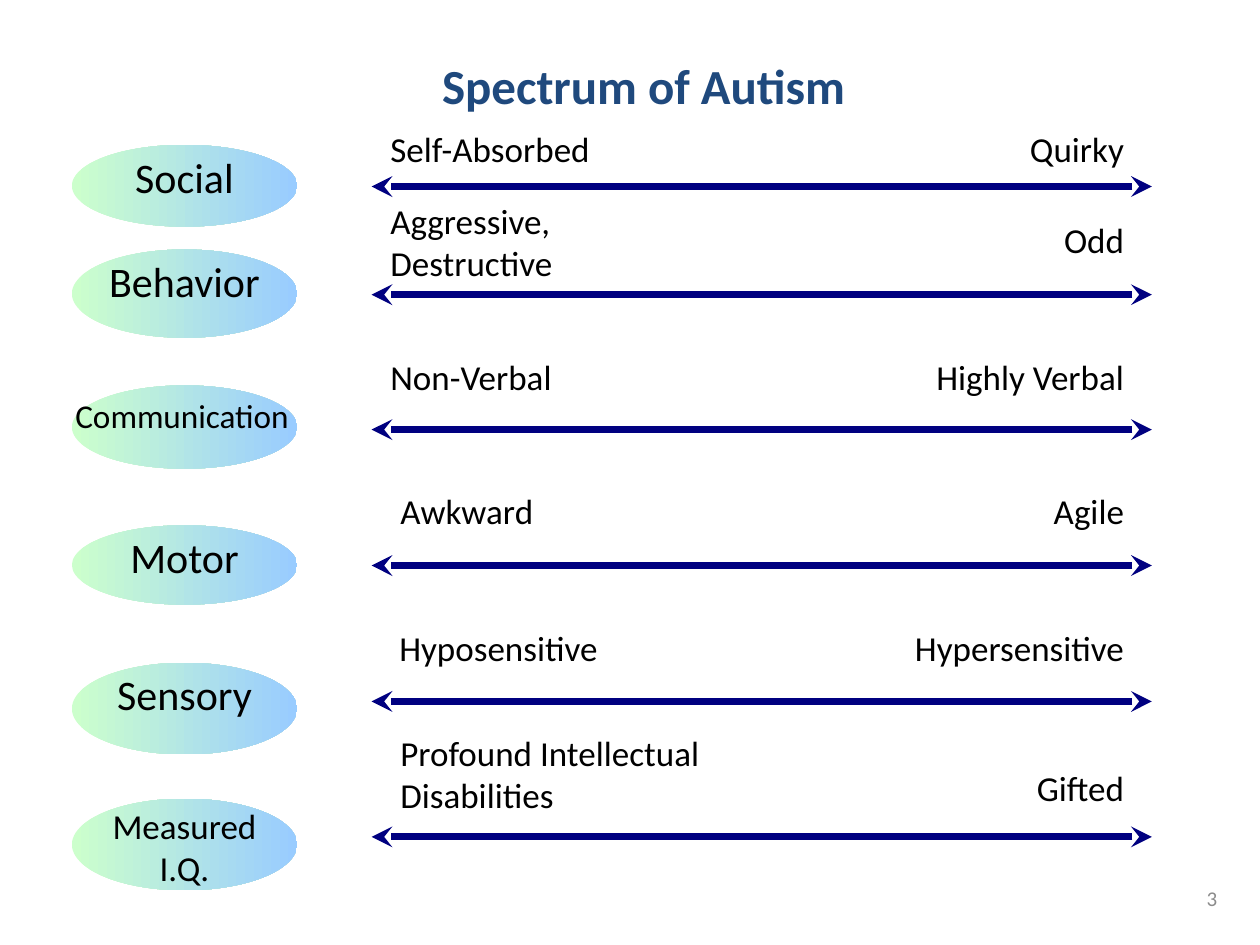
from dataclasses import dataclass

from lxml import etree
from pptx import Presentation
from pptx import util as u
from pptx.dml import color
from pptx.enum import shapes, text
from pptx.oxml import ns

FONT = "Calibri"
BLACK = "000000"
NAVY = "000080"
OVAL_LEFT, OVAL_WIDTH = 1.45, 4.54
ARROW_LEFT, ARROW_RIGHT = 7.49, 23.22
HIGH_RIGHT = 22.91  # shared right edge of the right-hand labels


@dataclass
class Box:
    """Lengths in centimetres."""
    left: float
    top: float
    width: float
    height: float


@dataclass
class Label:
    words: str
    box: Box
    size: int = 20
    align: text.PP_ALIGN = text.PP_ALIGN.LEFT


@dataclass
class Scale:
    oval_top: float
    oval_height: float
    arrow_y: float
    name: Label
    low: Label
    high: Label


def rgb(value: str) -> color.RGBColor:
    return color.RGBColor.from_string(value)


def lengths(box: Box) -> list:
    return [u.Cm(n) for n in (box.left, box.top, box.width, box.height)]


def name_label(words: str, top: float, height: float, size: int = 24) -> Label:
    return Label(words, Box(1.75, top, 3.94, height), size, text.PP_ALIGN.CENTER)


def high_label(words: str, top: float, width: float, height: float) -> Label:
    box = Box(HIGH_RIGHT - width, top, width, height)
    return Label(words, box, align=text.PP_ALIGN.RIGHT)


def fill_text(shape, label: Label, ink: str = BLACK, bold: bool = False) -> None:
    frame = shape.text_frame
    frame.word_wrap = True
    frame.text = label.words
    for paragraph in frame.paragraphs:
        paragraph.alignment = label.align
        for run in paragraph.runs:
            run.font.name = FONT
            run.font.size = u.Pt(label.size)
            run.font.bold = bold
            run.font.color.rgb = rgb(ink)


def add_label(slide, label: Label, ink: str = BLACK):
    shape = slide.shapes.add_textbox(*lengths(label.box))
    fill_text(shape, label, ink)
    return shape


def add_oval(slide, top: float, height: float) -> None:
    box = Box(OVAL_LEFT, top, OVAL_WIDTH, height)
    oval = slide.shapes.add_shape(shapes.MSO_SHAPE.OVAL, *lengths(box))
    oval.shadow.inherit = False
    oval.line.fill.background()
    oval.fill.gradient()
    oval.fill.gradient_angle = 0
    for stop, value in zip(oval.fill.gradient_stops, ("CCFFCC", "99CCFF")):
        stop.color.rgb = rgb(value)


def add_arrow(slide, y: float) -> None:
    arrow = slide.shapes.add_connector(
        shapes.MSO_CONNECTOR.STRAIGHT,
        u.Cm(ARROW_RIGHT), u.Cm(y), u.Cm(ARROW_LEFT), u.Cm(y))
    arrow.line.width = u.Pt(4)
    arrow.line.color.rgb = rgb(NAVY)
    line = arrow.line._get_or_add_ln()
    for end in ("a:headEnd", "a:tailEnd"):
        etree.SubElement(line, ns.qn(end), type="stealth")
    etree.SubElement(line.getparent(), ns.qn("a:effectLst"))


def add_scale(slide, scale: Scale) -> None:
    add_oval(slide, scale.oval_top, scale.oval_height)
    add_arrow(slide, scale.arrow_y)
    for label in (scale.name, scale.low, scale.high):
        add_label(slide, label)


SCALES = [
    Scale(2.92, 1.65, 3.76, name_label("Social", 2.92, 1.65),
          Label("Self-Absorbed", Box(7.62, 2.44, 5.28, 1.32)),
          high_label("Quirky", 2.44, 3.73, 1.32)),
    Scale(5.03, 1.78, 5.94, name_label("Behavior", 5.03, 1.27),
          Label("Aggressive,\nDestructive", Box(7.62, 3.89, 8.46, 2.03)),
          high_label("Odd", 4.29, 3.63, 1.07)),
    Scale(7.77, 1.68, 8.66,
          Label("Communication", Box(1.27, 7.85, 5.08, 1.68), 19),
          Label("Non-Verbal", Box(7.62, 7.04, 4, 1.63)),
          high_label("Highly Verbal", 7.04, 4.5, 1.63)),
    Scale(10.59, 1.6, 11.4, name_label("Motor", 10.59, 1.09),
          Label("Awkward", Box(7.82, 9.75, 3.61, 1.63)),
          high_label("Agile", 9.75, 3.94, 1.65)),
    Scale(13.36, 1.85, 14.14, name_label("Sensory", 13.36, 1.32),
          Label("Hyposensitive", Box(7.8, 12.5, 4.9, 2.18)),
          high_label("Hypersensitive", 12.5, 4.93, 2.18)),
    Scale(16.1, 1.85, 16.87, name_label("Measured I.Q.", 16.1, 1.32, 20),
          Label("Profound Intellectual Disabilities", Box(7.82, 14.63, 6.99, 2.24)),
          high_label("Gifted", 15.32, 3.94, 1.55)),
]


def main() -> None:
    presentation = Presentation()
    presentation.slide_width, presentation.slide_height = u.Cm(25.4), u.Cm(19.05)
    slide = presentation.slides.add_slide(presentation.slide_layouts[5])

    # Title
    heading = Label("Spectrum of Autism", Box(1.63, 0, 22.68, 2.44), 28,
                    text.PP_ALIGN.CENTER)
    title = slide.shapes.title
    title.left, title.top, title.width, title.height = lengths(heading.box)
    fill_text(title, heading, "1F497D", bold=True)
    title.text_frame.auto_size = text.MSO_AUTO_SIZE.NONE
    title.text_frame.vertical_anchor = text.MSO_ANCHOR.BOTTOM

    # Six scales, each with an oval, an arrow and its labels
    for scale in SCALES:
        add_scale(slide, scale)

    # Page number
    number = Label("3", Box(19.51, 17.48, 5.28, 1.27), 12, text.PP_ALIGN.RIGHT)
    footer = add_label(slide, number, "8C8C8C")
    footer.text_frame.vertical_anchor = text.MSO_ANCHOR.MIDDLE

    presentation.save("out.pptx")


if __name__ == "__main__":
    main()
